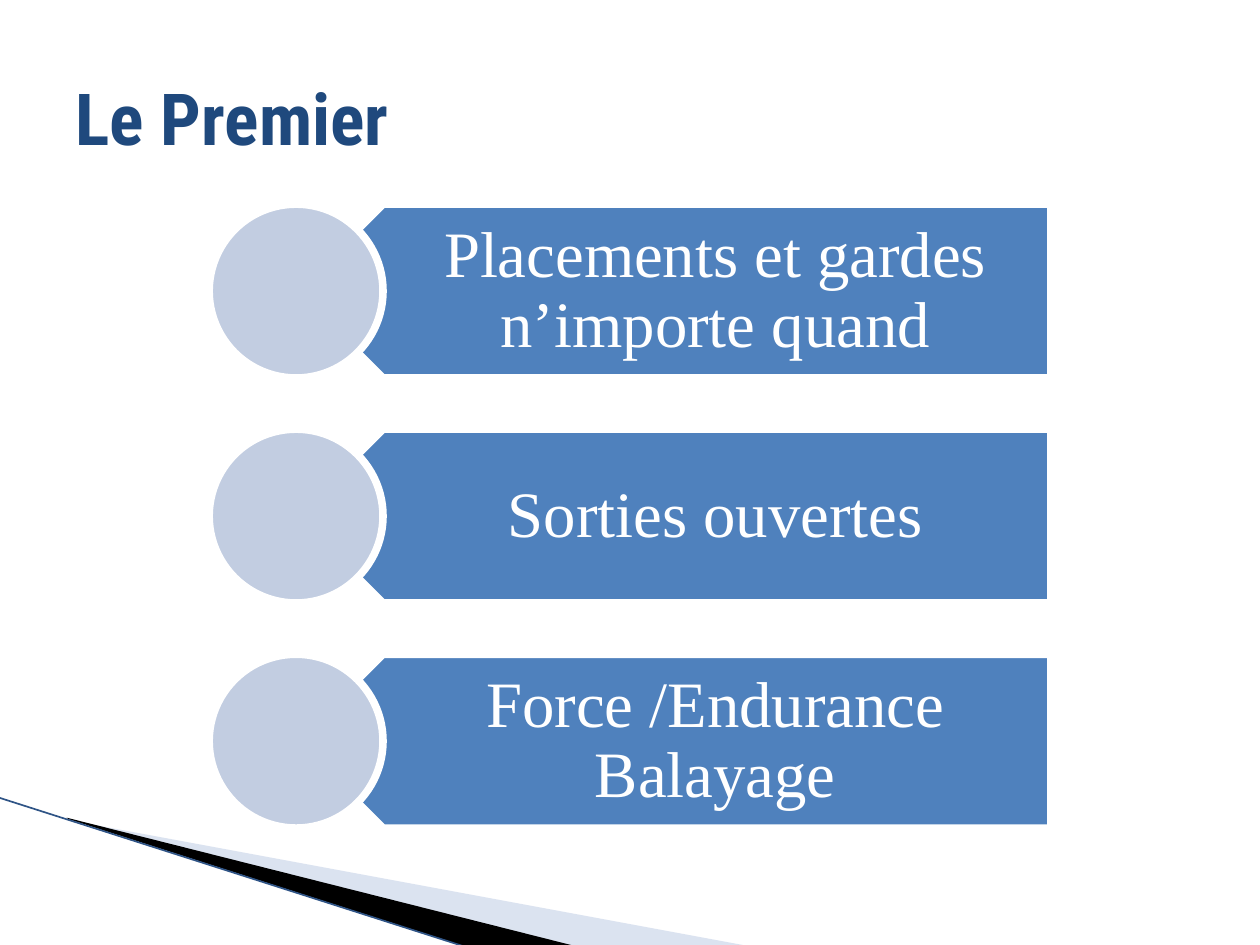
from lxml import etree
from pptx import Presentation
from pptx.dml.color import RGBColor
from pptx.enum.shapes import MSO_CONNECTOR, MSO_SHAPE
from pptx.enum.text import MSO_ANCHOR, PP_ALIGN
from pptx.oxml.ns import qn
from pptx.util import Inches, Pt

PENTAGON = MSO_SHAPE.PENTAGON
OVAL = MSO_SHAPE.OVAL
STRAIGHT = MSO_CONNECTOR.STRAIGHT
MIDDLE = MSO_ANCHOR.MIDDLE
LEFT, CENTER = PP_ALIGN.LEFT, PP_ALIGN.CENTER

THEME = {
    "title": RGBColor(0x1F, 0x49, 0x7D),
    "banner": RGBColor(0x4F, 0x81, 0xBD),
    "disc": RGBColor(0xC2, 0xCD, 0xE1),
    "white": RGBColor(0xFF, 0xFF, 0xFF),
    "pale_wedge": RGBColor(0xA7, 0xB9, 0xDB),
    "dark_wedge": RGBColor(0, 0, 0),
    "edge": RGBColor(0x2F, 0x54, 0x86),
    "title_font": "Roboto Condensed",
    "title_size": Pt(41),
    "item_font": "Times New Roman",
    "item_size": Pt(37),
    "outline": Pt(4.33),
}

prs = Presentation()
prs.slide_width, prs.slide_height = Inches(10), Inches(7.5)
COL, ROW = prs.slide_width / 100, prs.slide_height / 75
slide = prs.slides.add_slide(prs.slide_layouts[5])
shapes = slide.shapes


def place(left, top, width, height):
    return round(left * COL), round(top * ROW), round(width * COL), round(height * ROW)


def paint(shape, fill, outline=None):
    shape.shadow.inherit = False
    shape.fill.solid()
    shape.fill.fore_color.rgb = fill
    if outline is None:
        shape.line.fill.background()
    else:
        shape.line.color.rgb = outline
        shape.line.width = THEME["outline"]


wedges = [
    ("pale_wedge", [(5.5, 65.1), (59.5, 75.1), (45.6, 75.1), (5.5, 65)], 40),
    ("dark_wedge", [(5.3, 64.9), (45.7, 75.1), (37.2, 75.2), (5.4, 65)], 100),
]
for color, corners, opacity in wedges:
    points = [(x * COL, y * ROW) for x, y in corners]
    outline = shapes.build_freeform(*points[0])
    outline.add_line_segments(points[1:], close=True)
    wedge = outline.convert_to_shape()
    paint(wedge, THEME[color])
    if opacity < 100:
        tint = wedge.fill._xPr.find(qn("a:solidFill"))[0]
        etree.SubElement(tint, qn("a:alpha"), val=str(opacity * 1000))

edge = shapes.add_connector(STRAIGHT, *place(-0.1, 63.3, 37.1, 75.2))
edge.line.color.rgb = THEME["edge"]
edge.line.width = Pt(0.95)
etree.SubElement(edge._element.spPr, qn("a:effectLst"))

items = ["Placements et gardes n’importe quand", "Sorties ouvertes", "Force /Endurance Balayage"]
first_row, pitch, disc_size = 16.2, 17.86, 13.8
disc_left, right_edge = 16.6, 83.4
banner_left = disc_left + disc_size / 2
text_left = banner_left + disc_size / 4

for index, item in enumerate(items):
    top = first_row + index * pitch
    banner = shapes.add_shape(PENTAGON, *place(banner_left, top, right_edge - banner_left, disc_size))
    banner.rotation = 180
    paint(banner, THEME["banner"], THEME["white"])

    label = shapes.add_textbox(*place(text_left, top, right_edge - text_left, disc_size))
    frame = label.text_frame
    frame.word_wrap = True
    frame.vertical_anchor = MIDDLE
    frame.margin_left, frame.margin_right = round(6.1 * COL), round(2.9 * COL)
    frame.margin_top = frame.margin_bottom = round(1.5 * ROW)
    frame.text = item
    line = frame.paragraphs[0]
    line.alignment = CENTER
    line.line_spacing = 0.9
    line.font.name = THEME["item_font"]
    line.font.size = THEME["item_size"]
    line.font.color.rgb = THEME["white"]

    disc = shapes.add_shape(OVAL, *place(disc_left, top, disc_size, disc_size))
    paint(disc, THEME["disc"], THEME["white"])

title = shapes.title
title.left, title.top, title.width, title.height = place(5, 3, 90, 12.5)
title.text_frame.text = "Le Premier"
title.text_frame.vertical_anchor = MIDDLE
heading = title.text_frame.paragraphs[0]
heading.alignment = LEFT
heading.font.name = THEME["title_font"]
heading.font.size = THEME["title_size"]
heading.font.bold = True
heading.font.color.rgb = THEME["title"]

prs.save("out.pptx")
